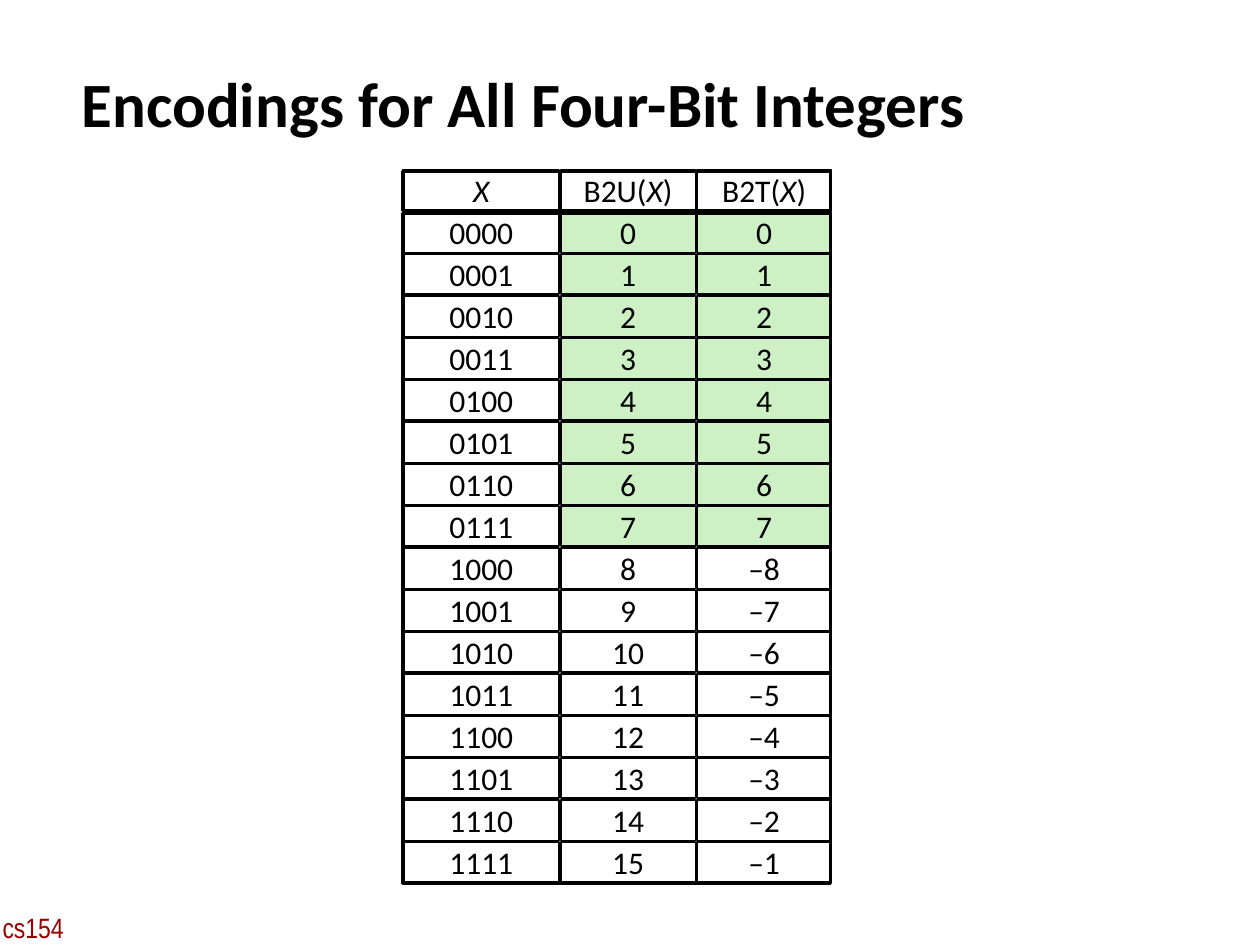
from dataclasses import dataclass

from pptx import Presentation
from pptx import util as u
from pptx.dml.color import RGBColor
from pptx.enum import shapes, text

BLACK = RGBColor(0x00, 0x00, 0x00)
WHITE = RGBColor(0xFF, 0xFF, 0xFF)
GREEN = RGBColor(0xCD, 0xF1, 0xC5)
DARK_RED = RGBColor(0x99, 0x00, 0x00)

WIDTH, HEIGHT = 10, 7.5
BITS = 4
CODES = 2 ** BITS
HALF = CODES // 2

GRID_LEFT, GRID_TOP = 3.2, 1.35
COLUMN_WIDTHS = (1.24, 1.07, 1.07)
GAP = 0.01
CELL_HEIGHT = 0.32
ROW_PITCH = 1 / 3


@dataclass(frozen=True)
class Area:
    left: float
    top: float
    width: float
    height: float

    def lengths(self) -> tuple[int, int, int, int]:
        return (u.Inches(self.left), u.Inches(self.top),
                u.Inches(self.width), u.Inches(self.height))


@dataclass(frozen=True)
class Style:
    name: str
    size: int
    color: RGBColor = BLACK
    bold: bool = False


TITLE = Style("Calibri", 36, bold=True)
CELL = Style("Calibri", 18)
COURSE = Style("Arial Narrow", 16, DARK_RED)

TITLE_AREA = Area(0.058 * WIDTH, 0.064 * HEIGHT, 0.726 * WIDTH, 0.088 * HEIGHT)
COURSE_AREA = Area(-0.003 * WIDTH, 0.957 * HEIGHT, 0.061 * WIDTH, 0.049 * HEIGHT)


def format_font(font, style: Style) -> None:
    font.name, font.size, font.bold = style.name, u.Pt(style.size), style.bold
    font.color.rgb = style.color


def fill_box(box, area: Area, words: str, style: Style, inset_x: float, inset_y: float) -> None:
    box.left, box.top, box.width, box.height = area.lengths()
    frame = box.text_frame
    frame.word_wrap = False
    frame.auto_size = text.MSO_AUTO_SIZE.SHAPE_TO_FIT_TEXT
    frame.vertical_anchor = text.MSO_ANCHOR.TOP
    frame.margin_left = frame.margin_right = u.Inches(inset_x)
    frame.margin_top = frame.margin_bottom = u.Inches(inset_y)
    para = frame.paragraphs[0]
    para.text = words
    para.alignment = text.PP_ALIGN.LEFT
    format_font(para.font, style)


def add_rectangle(group, area: Area, line_width: float):
    box = group.shapes.add_shape(shapes.MSO_SHAPE.RECTANGLE, *area.lengths())
    box.shadow.inherit = False
    box.fill.background()
    box.line.color.rgb = BLACK
    box.line.width = u.Pt(line_width)
    return box


def add_cell(group, area: Area, words: str, fill: RGBColor) -> None:
    box = add_rectangle(group, area, 1)
    box.fill.solid()
    box.fill.fore_color.rgb = fill
    frame = box.text_frame
    frame.word_wrap = False
    frame.vertical_anchor = text.MSO_ANCHOR.MIDDLE
    para = frame.paragraphs[0]
    para.alignment = text.PP_ALIGN.CENTER
    format_font(para.font, CELL)
    for part in filter(None, words.partition("X")):
        span = para.add_run()
        span.text = part
        span.font.italic = part == "X"


def cell_area(row: int, column: int) -> Area:
    left = GRID_LEFT + sum(COLUMN_WIDTHS[:column]) + column * GAP
    return Area(left, GRID_TOP + row * ROW_PITCH, COLUMN_WIDTHS[column], CELL_HEIGHT)


def signed(code: int) -> str:
    return str(code) if code < HALF else f"–{CODES - code}"


def add_encodings(page) -> None:
    group = page.shapes.add_group_shape()
    rows = [("X", "B2U(X)", "B2T(X)")]
    rows += [(f"{code:0{BITS}b}", str(code), signed(code)) for code in range(CODES)]
    for row, values in enumerate(rows):
        for column, words in enumerate(values):
            same = column > 0 and 1 <= row <= HALF
            add_cell(group, cell_area(row, column), words, GREEN if same else WHITE)
    frame_width = 0.339 * WIDTH
    body_top = GRID_TOP + ROW_PITCH + GAP
    add_rectangle(group, Area(GRID_LEFT, GRID_TOP + GAP, frame_width, 0.31), 2)
    add_rectangle(group, Area(GRID_LEFT, body_top, frame_width, CODES * ROW_PITCH - 2 * GAP), 2)


def main() -> None:
    deck = Presentation()
    deck.slide_width, deck.slide_height = u.Inches(WIDTH), u.Inches(HEIGHT)
    page = deck.slides.add_slide(deck.slide_layouts[5])
    fill_box(page.shapes.title, TITLE_AREA,
             "Encodings for All Four-Bit Integers", TITLE, 0.07, 0.03)
    course = page.shapes.add_textbox(*COURSE_AREA.lengths())
    fill_box(course, COURSE_AREA, "cs154", COURSE, 0.05, 0.05)
    add_encodings(page)
    deck.save("out.pptx")


if __name__ == "__main__":
    main()
